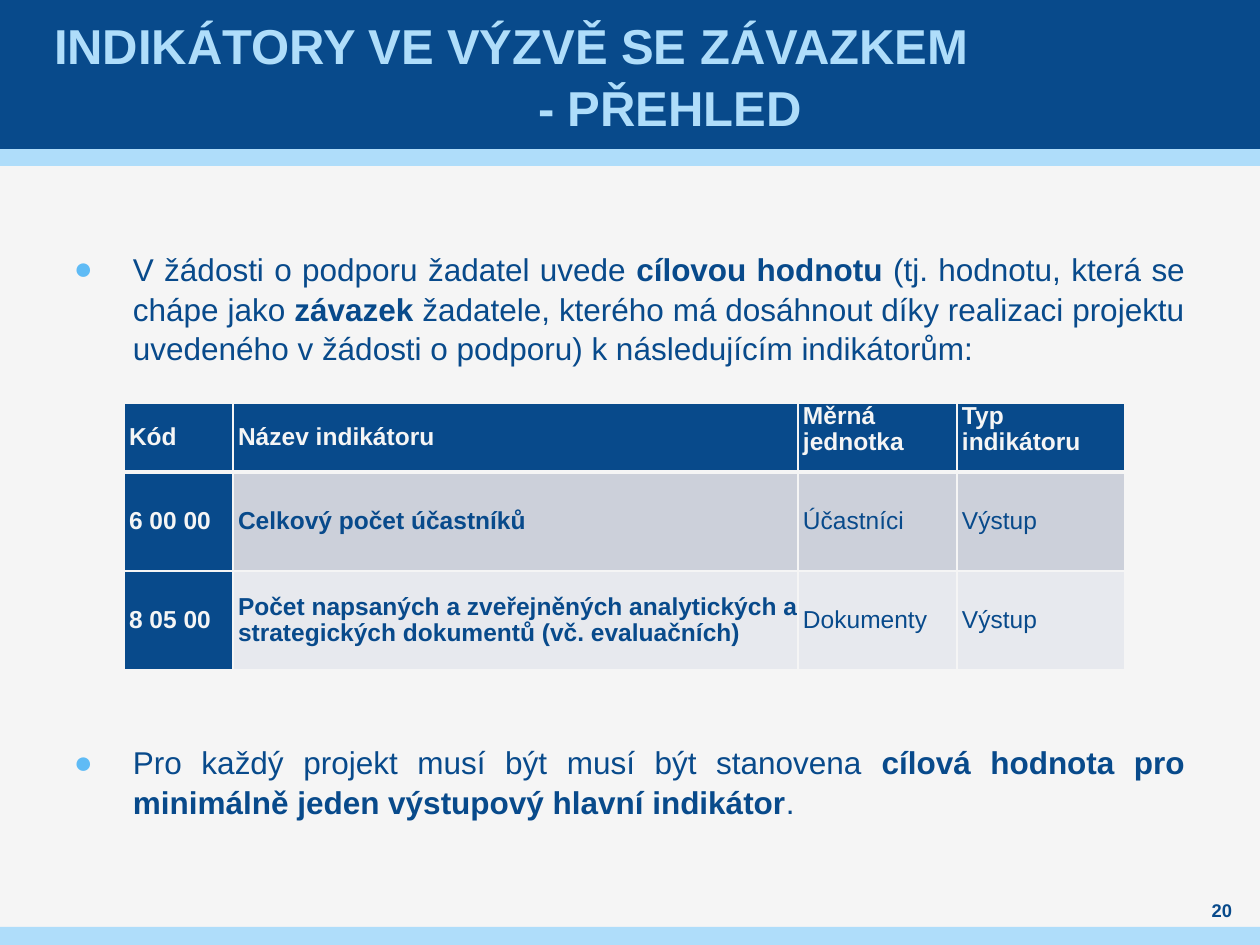
from lxml import etree
from pptx import Presentation
from pptx import util as u
from pptx.dml.color import RGBColor
from pptx.enum import shapes, text
from pptx.oxml.ns import qn

PX = u.Inches(1) // 126
WIDTH, HEIGHT = 1260, 945
FONT = "Arial"
COLORS = {"navy": "084A8B", "sky": "AFDDFA", "bullet": "5FBBF5", "paper": "F5F5F5",
          "row_dark": "CCD0DA", "row_light": "E7E9EE"}

# Each title line: wording, left indent in px
TITLE = [("INDIKÁTORY VE VÝZVĚ SE ZÁVAZKEM", 0), ("- PŘEHLED", 484)]
PAGE_NUMBER = "20"
# Each bullet: list of (wording, bold)
BULLETS = [
    [("V žádosti o podporu žadatel uvede ", False), ("cílovou hodnotu ", True),
     ("(tj. hodnotu, která se chápe jako ", False), ("závazek", True),
     (" žadatele, kterého má dosáhnout díky realizaci projektu uvedeného "
      "v žádosti o podporu) k následujícím indikátorům:", False)],
    [("Pro každý projekt musí být musí být stanovena ", False),
     ("cílová hodnota pro minimálně jeden výstupový hlavní indikátor", True), (".", False)],
]
INDICATORS = [
    ["Kód", "Název indikátoru", "Měrná jednotka", "Typ indikátoru"],
    ["6 00 00", "Celkový počet účastníků", "Účastníci", "Výstup"],
    ["8 05 00", "Počet napsaných a zveřejněných analytických a strategických dokumentů "
                "(vč. evaluačních)", "Dokumenty", "Výstup"],
]
COLUMN_WIDTHS = [109, 565, 159, 168]
ROW_HEIGHTS = [69, 99, 99]
ROW_FILLS = ["navy", "row_dark", "row_light"]
# Top, height, colour of the full-width bars
BARS = [(149, 17, "sky"), (0, 149, "navy"), (927, 18, "sky")]
BULLET_INDENT = 59
TABLE_GAP = 208  # points left free between the bullets for the table


def rgb(name):
    return RGBColor.from_string(COLORS[name])


def box(*lengths):
    return [length * PX for length in lengths]


def set_font(paragraph, size, color, bold=None):
    font = paragraph.font
    font.name, font.size, font.bold = FONT, u.Pt(size), bold
    font.color.rgb = rgb(color)


def set_frame(frame, anchor, side=0):
    frame.word_wrap = True
    frame.auto_size = text.MSO_AUTO_SIZE.NONE
    frame.vertical_anchor = anchor
    frame.margin_left = frame.margin_right = side * PX
    frame.margin_top = frame.margin_bottom = 0


def set_indent(paragraph, left, first=0):
    properties = paragraph._p.get_or_add_pPr()
    properties.set("marL", str(left * PX))
    properties.set("indent", str(first * PX))
    return properties


def add_bullet(paragraph):
    properties = set_indent(paragraph, BULLET_INDENT, -BULLET_INDENT)
    color = etree.SubElement(properties, qn("a:buClr"))
    etree.SubElement(color, qn("a:srgbClr"), val=COLORS["bullet"])
    etree.SubElement(properties, qn("a:buFont"), typeface=FONT)
    etree.SubElement(properties, qn("a:buChar"), char="●")


def set_borders(cell, bottom):
    """Draw 1 pt borders in the paper colour, with the given bottom width."""
    properties = cell._tc.get_or_add_tcPr()
    for index, (tag, points) in enumerate([("lnL", 1), ("lnR", 1), ("lnT", 1), ("lnB", bottom)]):
        line = etree.Element(qn("a:" + tag), w=str(u.Pt(points)))
        fill = etree.SubElement(line, qn("a:solidFill"))
        etree.SubElement(fill, qn("a:srgbClr"), val=COLORS["paper"])
        properties.insert(index, line)


def add_bars(slide):
    for top, height, color in BARS:
        bar = slide.shapes.add_shape(shapes.MSO_SHAPE.RECTANGLE, *box(0, top, WIDTH, height))
        bar.shadow.inherit = False
        bar.fill.solid()
        bar.fill.fore_color.rgb = rgb(color)
        bar.line.fill.background()


def fill_title(slide):
    title = slide.shapes.title
    slide.shapes._spTree.append(title._element)  # in front of the bars
    title.left, title.top, title.width, title.height = box(49, 0, 1160, 149)
    frame = title.text_frame
    set_frame(frame, text.MSO_ANCHOR.MIDDLE, side=5)
    frame.text = "\n".join(line for line, _ in TITLE)
    for paragraph, (_, left) in zip(frame.paragraphs, TITLE):
        set_indent(paragraph, left)
        paragraph.alignment = text.PP_ALIGN.LEFT
        paragraph.line_spacing = 1.05
        paragraph.space_before = u.Pt(0)
        set_font(paragraph, 28, "sky", True)


def add_bullets(slide):
    frame = slide.shapes.add_textbox(*box(74, 248, 1111, 595)).text_frame
    set_frame(frame, text.MSO_ANCHOR.TOP)
    for index, runs in enumerate(BULLETS):
        paragraph = frame.add_paragraph() if index else frame.paragraphs[0]
        add_bullet(paragraph)
        paragraph.alignment = text.PP_ALIGN.JUSTIFY
        paragraph.line_spacing = 1.05
        paragraph.space_after = u.Pt(6)
        if index:
            paragraph.space_before = u.Pt(TABLE_GAP)
        set_font(paragraph, 18, "navy")
        for wording, bold in runs:
            run = paragraph.add_run()
            run.text, run.font.bold = wording, bold


def add_indicators(slide):
    table = slide.shapes.add_table(
        len(ROW_HEIGHTS), len(COLUMN_WIDTHS),
        *box(124, 403, sum(COLUMN_WIDTHS), sum(ROW_HEIGHTS))).table
    for column, width in zip(table.columns, COLUMN_WIDTHS):
        column.width = width * PX
    for r, (wordings, height) in enumerate(zip(INDICATORS, ROW_HEIGHTS)):
        table.rows[r].height = height * PX
        for c, wording in enumerate(wordings):
            cell = table.cell(r, c)
            is_heading = r == 0 or c == 0
            cell.text = wording
            cell.margin_left = cell.margin_right = cell.margin_top = cell.margin_bottom = 0
            cell.vertical_anchor = (text.MSO_ANCHOR.TOP if r == 0 and c > 1
                                    else text.MSO_ANCHOR.MIDDLE)
            cell.fill.solid()
            cell.fill.fore_color.rgb = rgb("navy" if is_heading else ROW_FILLS[r])
            set_borders(cell, bottom=3 if r == 0 else 1)
            paragraph = cell.text_frame.paragraphs[0]
            set_indent(paragraph, 5)
            paragraph.line_spacing = 0.96
            set_font(paragraph, 14, "paper" if is_heading else "navy", is_heading or c == 1)


def add_page_number(slide):
    frame = slide.shapes.add_textbox(*box(1190, 898, 64, 25)).text_frame
    set_frame(frame, text.MSO_ANCHOR.MIDDLE)
    paragraph = frame.paragraphs[0]
    paragraph.text = PAGE_NUMBER
    paragraph.alignment = text.PP_ALIGN.CENTER
    set_font(paragraph, 10.5, "navy", True)


def main():
    deck = Presentation()
    deck.slide_width, deck.slide_height = box(WIDTH, HEIGHT)
    slide = deck.slides.add_slide(deck.slide_layouts[5])
    slide.background.fill.solid()
    slide.background.fill.fore_color.rgb = rgb("paper")
    add_bars(slide)
    fill_title(slide)
    add_bullets(slide)
    add_page_number(slide)
    add_indicators(slide)
    deck.save("out.pptx")


if __name__ == "__main__":
    main()
